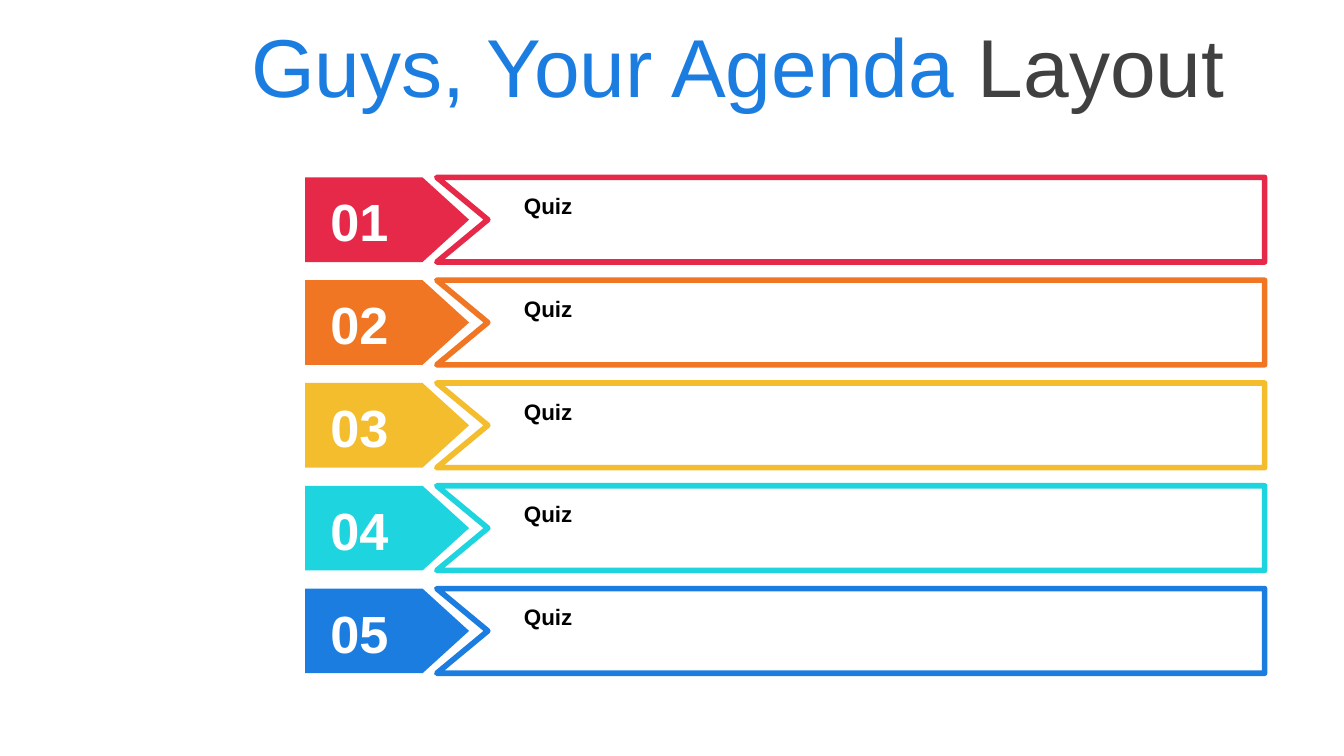
from pptx import Presentation
from pptx.dml.color import RGBColor
from pptx.enum.shapes import MSO_SHAPE as Shape
from pptx.enum.text import MSO_ANCHOR as Anchor, MSO_AUTO_SIZE as AutoSize
from pptx.oxml.ns import qn
from pptx.util import Inches, Pt

WHITE = RGBColor(0xFF, 0xFF, 0xFF)
BLACK = RGBColor(0x00, 0x00, 0x00)
CHARCOAL = RGBColor(0x40, 0x40, 0x40)
RED = RGBColor(0xE6, 0x29, 0x49)
ORANGE = RGBColor(0xF0, 0x76, 0x24)
YELLOW = RGBColor(0xF4, 0xBD, 0x2D)
CYAN = RGBColor(0x1E, 0xD4, 0xDE)
BLUE = RGBColor(0x1C, 0x7D, 0xE1)

AGENDA = [(RED, "Quiz"), (ORANGE, "Quiz"), (YELLOW, "Quiz"), (CYAN, "Quiz"), (BLUE, "Quiz")]
FIRST_TOP, LAST_TOP = 1.32, 4.38
ROW_HEIGHT = 0.63


class AgendaSlide:
    """Draws agenda elements in one style on the current slide."""

    font_name = "Arial"

    def __init__(self, slide):
        self.slide = slide

    def text(self, left, top, width, height, runs, size, bold=False,
             anchor=Anchor.TOP, inset=0.05, fit=AutoSize.SHAPE_TO_FIT_TEXT):
        frame = self.slide.shapes.add_textbox(
            Inches(left), Inches(top), Inches(width), Inches(height)).text_frame
        frame.word_wrap = True
        frame.auto_size = fit
        frame.vertical_anchor = anchor
        frame.margin_top = frame.margin_bottom = Inches(inset)
        paragraph = frame.paragraphs[0]
        paragraph.font.name = self.font_name
        paragraph.font.size = Pt(size)
        paragraph.font.bold = bold
        for words, color in runs:
            run = paragraph.add_run()
            run.text = words
            run.font.color.rgb = color

    def tag(self, top, color):
        tag = self.slide.shapes.add_shape(
            Shape.PENTAGON, Inches(2.27), Inches(top), Inches(1.22), Inches(ROW_HEIGHT))
        tag.adjustments[0] = 0.55
        tag.shadow.inherit = False
        tag.fill.solid()
        tag.fill.fore_color.rgb = color
        tag.line.fill.background()

    def panel(self, top, color):
        left, right, notch = 3.25, 9.41, 3.63
        bottom = top + ROW_HEIGHT
        corners = [(right, top), (right, bottom), (left, bottom), (notch, top + ROW_HEIGHT / 2)]
        builder = self.slide.shapes.build_freeform(Inches(left), Inches(top))
        builder.add_line_segments([(Inches(x), Inches(y)) for x, y in corners], close=True)
        panel = builder.convert_to_shape()
        panel.shadow.inherit = False
        panel.fill.solid()
        panel.fill.fore_color.rgb = WHITE
        panel.line.color.rgb = color
        panel.line.width = Pt(3)
        outline = panel.line.fill._xPr
        outline.append(outline.makeelement(qn("a:round"), {}))

    def item(self, number, top, color, topic):
        self.tag(top, color)
        self.panel(top, color)
        self.text(2.36, top + 0.09, 0.66, 0.47, [(f"{number:02}", WHITE)], 28,
                  bold=True, anchor=Anchor.MIDDLE, inset=0)
        self.text(3.8, top + 0.06, 5.3, 0.3, [(topic, BLACK)], 12, bold=True)


def main():
    deck = Presentation()
    deck.slide_width = Inches(10)
    deck.slide_height = deck.slide_width * 9 // 16
    agenda = AgendaSlide(deck.slides.add_slide(deck.slide_layouts[6]))
    agenda.text(1.77, 0, 8.23, 0.97, [("Guys, Your Agenda ", BLUE), ("Layout", CHARCOAL)], 44,
                anchor=Anchor.MIDDLE, fit=AutoSize.NONE)
    pitch = (LAST_TOP - FIRST_TOP) / (len(AGENDA) - 1)
    for index, (color, topic) in enumerate(AGENDA):
        agenda.item(index + 1, FIRST_TOP + index * pitch, color, topic)
    deck.save("out.pptx")


if __name__ == "__main__":
    main()
